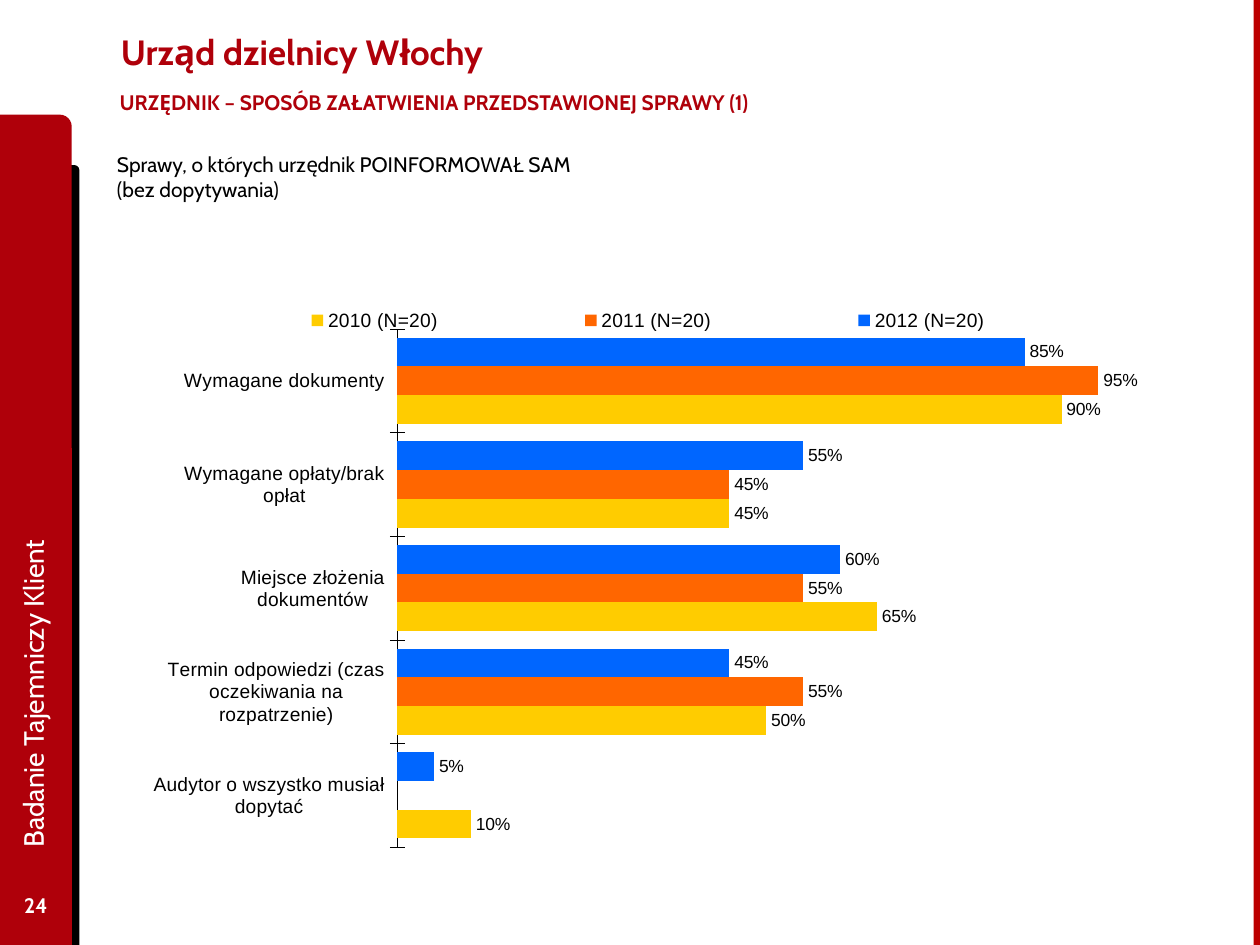
"""Build the slide on matters the clerk explained unprompted, 2010 to 2012."""
from lxml.etree import SubElement
from pptx import Presentation
from pptx.chart.data import CategoryChartData
from pptx.dml.color import RGBColor
from pptx.enum.chart import XL_CHART_TYPE, XL_LEGEND_POSITION, XL_TICK_MARK
from pptx.enum.shapes import MSO_SHAPE
from pptx.enum.text import MSO_ANCHOR, MSO_AUTO_SIZE, PP_ALIGN
from pptx.oxml.ns import qn
from pptx.util import Inches, Pt

RED = RGBColor(0xAF, 0x00, 0x0A)
EDGE = RGBColor(0xBD, 0x00, 0x00)
BLACK = RGBColor(0x00, 0x00, 0x00)
WHITE = RGBColor(0xFF, 0xFF, 0xFF)
BLUE = RGBColor(0x00, 0x66, 0xFF)
ORANGE = RGBColor(0xFF, 0x66, 0x00)
YELLOW = RGBColor(0xFF, 0xCC, 0x00)

TITLE = "Urząd dzielnicy Włochy"
BARS = [
    (MSO_SHAPE.ROUND_1_RECTANGLE, (0.39, 1.31, 0.24, 6.19), BLACK),
    (MSO_SHAPE.ROUND_1_RECTANGLE, (0, 0.91, 0.57, 6.59), RED),
    (MSO_SHAPE.RECTANGLE, (9.95, 0, 0.05, 7.5), EDGE),
]
TEXTS = [
    ("URZĘDNIK – SPOSÓB ZAŁATWIENIA PRZEDSTAWIONEJ SPRAWY (1)",
     (0.75, 0.66, 3.85, 0.33), dict(color=RED, bold=True, wrap=False, side=0.2)),
    ("Sprawy, o których urzędnik POINFORMOWAŁ SAM \v(bez dopytywania)",
     (0.83, 1.15, 4.41, 0.5), dict(color=BLACK)),
    ("24", (0, 6.98, 0.57, 0.4),
     dict(color=WHITE, bold=True, align=PP_ALIGN.CENTER, anchor=MSO_ANCHOR.MIDDLE)),
    ("Badanie Tajemniczy Klient", (-2.62, 3.69, 5.76, 0.51),
     dict(color=WHITE, size=16, anchor=MSO_ANCHOR.MIDDLE, turn=270)),
]
CATS = [
    "Wymagane dokumenty",
    "Wymagane opłaty/brak opłat",
    "Miejsce złożenia dokumentów",
    "Termin odpowiedzi (czas oczekiwania na rozpatrzenie)",
    "Audytor o wszystko musiał dopytać",
]
SERIES = [
    ("2012 (N=20)", (0.85, 0.55, 0.6, 0.45, 0.05), BLUE),
    ("2011 (N=20)", (0.95, 0.45, 0.55, 0.55, None), ORANGE),
    ("2010 (N=20)", (0.9, 0.45, 0.65, 0.5, 0.1), YELLOW),
]
CHART = (1.2, 2.25, 7.83, 4.52)
PLOT = (0.25, 0.08, 0.75, 0.91)
LEGEND = (0.02, 0.03, 0.97, 0.07)


def place(shape, box):
    shape.left, shape.top, shape.width, shape.height = map(Inches, box)


def write(shape, text, color=BLACK, size=12, bold=False, wrap=True, side=0.1,
          align=PP_ALIGN.LEFT, anchor=MSO_ANCHOR.TOP, turn=0):
    shape.rotation = turn
    frame = shape.text_frame
    frame.word_wrap = wrap
    frame.auto_size = MSO_AUTO_SIZE.NONE
    frame.vertical_anchor = anchor
    frame.margin_left = frame.margin_right = Inches(side)
    para = frame.paragraphs[0]
    para.text = text
    para.alignment = align
    style(para.font, size, "Cabin", color, bold)
    for run in para.runs:
        style(run.font, size, "Cabin", color, bold)


def style(font, size, name="Arial", color=BLACK, bold=False):
    font.size, font.name, font.bold = Pt(size), name, bold
    font.color.rgb = color


def lay_out(owner, box, inner=False):
    layout = owner.find(qn("c:layout"))
    if layout is None:
        layout = SubElement(owner, qn("c:layout"))
        first = owner.find(qn("c:legendPos"))
        if first is None:
            owner.insert(0, layout)
        else:
            first.addnext(layout)
    for child in list(layout):
        layout.remove(child)
    manual = SubElement(layout, qn("c:manualLayout"))
    items = [("layoutTarget", "inner")] if inner else []
    items += [("xMode", "edge"), ("yMode", "edge")]
    items += zip("xywh", map(str, box))
    for tag, val in items:
        SubElement(manual, qn("c:" + tag)).set("val", val)


def add_bars(slide):
    for kind, box, color in BARS:
        bar = slide.shapes.add_shape(kind, *map(Inches, box))
        bar.shadow.inherit = False
        bar.fill.solid()
        bar.fill.fore_color.rgb = color
        bar.line.fill.background()


def add_graph(slide):
    data = CategoryChartData(number_format="0%")
    data.categories = CATS
    for name, vals, _ in SERIES:
        data.add_series(name, vals)
    chart = slide.shapes.add_chart(
        XL_CHART_TYPE.BAR_CLUSTERED, *map(Inches, CHART), data).chart
    chart.has_title = False
    style(chart.font, 10)
    plot = chart.plots[0]
    plot.gap_width, plot.overlap = 60, 0
    plot.vary_by_categories = False
    for series, (_, _, color) in zip(plot.series, SERIES):
        series.format.fill.solid()
        series.format.fill.fore_color.rgb = color
        labels = series.data_labels
        labels.show_value = True
        labels.number_format = "0%"
        labels.number_format_is_linked = False
        style(labels.font, 10)
    cat, val = chart.category_axis, chart.value_axis
    cat.reverse_order = True
    cat.major_tick_mark = XL_TICK_MARK.CROSS
    cat.format.line.color.rgb = BLACK
    cat.format.line.width = Pt(0.25)
    style(cat.tick_labels.font, 11)
    val.minimum_scale, val.maximum_scale, val.major_unit = 0, 1, 0.2
    val.has_major_gridlines = False
    val.visible = False
    chart.has_legend = True
    legend = chart.legend
    legend.position = XL_LEGEND_POSITION.RIGHT
    legend.include_in_layout = False
    style(legend.font, 11)
    root = chart.element
    lay_out(root.find(".//" + qn("c:plotArea")), PLOT, inner=True)
    lay_out(root.find(".//" + qn("c:legend")), LEGEND)


def main():
    deck = Presentation()
    deck.slide_width, deck.slide_height = Inches(10), Inches(7.5)
    slide = deck.slides.add_slide(deck.slide_layouts[5])
    add_bars(slide)
    title = slide.shapes.title
    place(title, (0.86, 0.05, 7.77, 0.72))
    write(title, TITLE, color=RED, size=20, bold=True, anchor=MSO_ANCHOR.MIDDLE)
    add_graph(slide)
    for text, box, look in TEXTS:
        write(slide.shapes.add_textbox(*map(Inches, box)), text, **look)
    deck.save("out.pptx")


if __name__ == "__main__":
    main()
